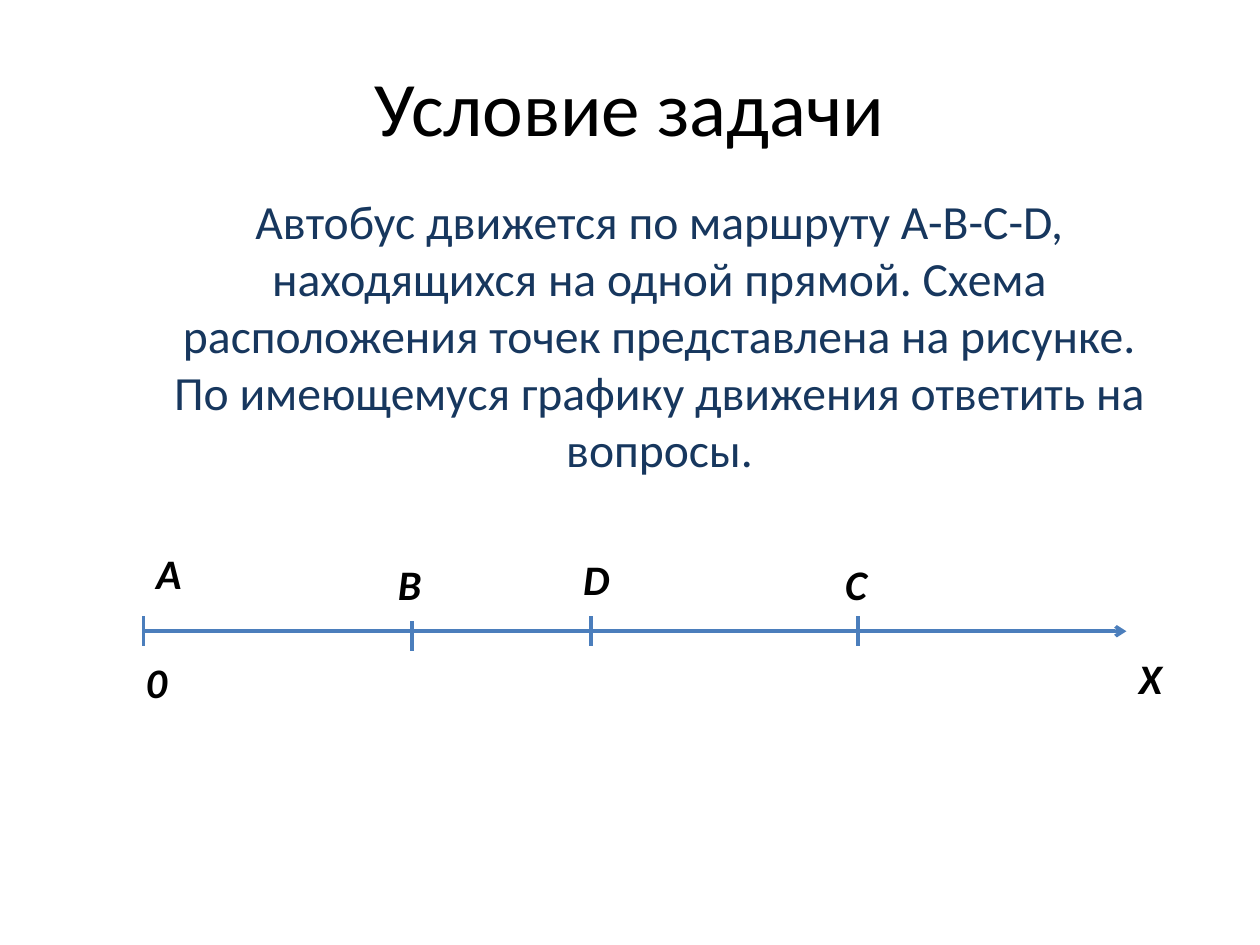
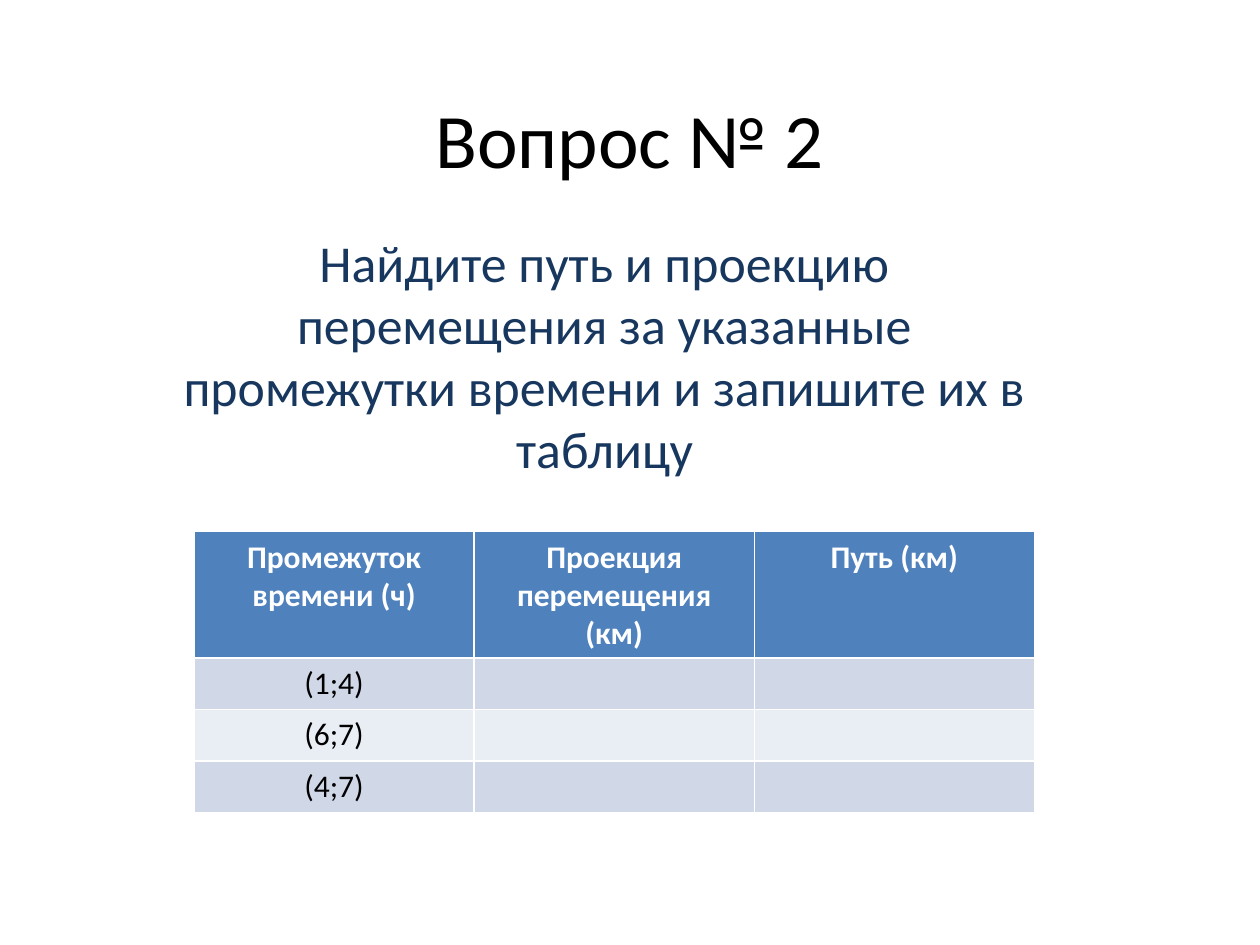
from lxml.etree import SubElement
from pptx import Presentation
from pptx.dml.color import RGBColor
from pptx.enum.shapes import MSO_CONNECTOR
from pptx.enum.text import MSO_ANCHOR, PP_ALIGN
from pptx.oxml.ns import qn
from pptx.util import Inches, Pt

BLACK, WHITE, NAVY, AXIS_BLUE = "000000", "FFFFFF", "17375E", "4B7EBC"
HEADER_BLUE, BAND_DARK, BAND_LIGHT = "4F81BD", "D0D8E8", "E9EDF4"
TITLE_LEFT, TITLE_WIDTH, TITLE_HEIGHT = 0.75, 8.5, 1.61


def style(paragraph, size, color, bold=False, italic=False, align=PP_ALIGN.CENTER):
    paragraph.alignment = align
    font = paragraph.font
    font.name, font.size = "Calibri", Pt(size)
    font.bold, font.italic = bold, italic
    font.color.rgb = RGBColor.from_string(color)


def add_line(slide, x1, y1, x2, y2):
    line = slide.shapes.add_connector(
        MSO_CONNECTOR.STRAIGHT, Inches(x1), Inches(y1), Inches(x2), Inches(y2))
    line.line.color.rgb = RGBColor.from_string(AXIS_BLUE)
    line.line.width = Pt(2)
    SubElement(line._element.spPr, qn("a:effectLst"))
    return line


presentation = Presentation()
presentation.slide_width, presentation.slide_height = Inches(10), Inches(7.5)

pages = [
    ("Условие задачи", 0.03,
     "Автобус движется по маршруту A-B-C-D, находящихся на одной прямой. "
     "Схема расположения точек представлена на рисунке.\v"
     "По имеющемуся графику движения ответить на вопросы.",
     (1.14, 1.47, 8.19, 2.28), 27.2),
    ("Вопрос № 2", 0.29,
     "Найдите путь и проекцию перемещения за указанные промежутки времени "
     "и запишите их в таблицу",
     (1.3, 1.78, 7, 1.92), 29.6),
]
slides = []
for title, title_top, body, body_box, body_size in pages:
    slide = presentation.slides.add_slide(presentation.slide_layouts[6])
    slides.append(slide)
    title_box = (TITLE_LEFT, title_top, TITLE_WIDTH, TITLE_HEIGHT)
    for text, box, size, color, anchor in (
            (title, title_box, 44, BLACK, MSO_ANCHOR.MIDDLE),
            (body, body_box, body_size, NAVY, MSO_ANCHOR.TOP)):
        frame = slide.shapes.add_textbox(*map(Inches, box)).text_frame
        frame.word_wrap = True
        frame.vertical_anchor = anchor
        frame.text = text
        style(frame.paragraphs[0], size, color)

route_slide, table_slide = slides

AXIS_START, AXIS_END, AXIS_Y, TICK = 1.14, 8.94, 5.01, 0.24
axis = add_line(route_slide, AXIS_START, AXIS_Y, AXIS_END, AXIS_Y)
SubElement(axis.line._get_or_add_ln(), qn("a:tailEnd"), type="arrow")
for x, tick_top in ((AXIS_START, 4.89), (3.27, 4.93), (4.69, 4.89), (6.81, 4.89)):
    add_line(route_slide, x, tick_top, x, tick_top + TICK)

point_labels = [("А", 1.14, 4.3), ("B", 3.06, 4.38), ("D", 4.53, 4.34),
                ("C", 6.61, 4.38), ("X", 8.94, 5.13), ("0", 1.06, 5.16)]
for text, left, top in point_labels:
    label = route_slide.shapes.add_textbox(
        Inches(left), Inches(top), Inches(0.4), Inches(0.5))
    label.text_frame.word_wrap = False
    label.text_frame.text = text
    style(label.text_frame.paragraphs[0], 24, BLACK, True, True, PP_ALIGN.LEFT)

rows = [("Промежуток времени (ч)", "Проекция перемещения (км)", "Путь (км)"),
        ("(1;4)", "", ""), ("(6;7)", "", ""), ("(4;7)", "", "")]
HEADER_HEIGHT, ROW_HEIGHT = 1, 0.41
table = table_slide.shapes.add_table(
    len(rows), len(rows[0]), Inches(1.54), Inches(4.22), Inches(6.67),
    Inches(HEADER_HEIGHT + 3 * ROW_HEIGHT)).table
for row_index, texts in enumerate(rows):
    header = row_index == 0
    table.rows[row_index].height = Inches(HEADER_HEIGHT if header else ROW_HEIGHT)
    fill = HEADER_BLUE if header else (BAND_LIGHT, BAND_DARK)[row_index % 2]
    for column_index, text in enumerate(texts):
        cell = table.cell(row_index, column_index)
        cell.fill.solid()
        cell.fill.fore_color.rgb = RGBColor.from_string(fill)
        cell.text = text
        style(cell.text_frame.paragraphs[0], 18, WHITE if header else BLACK, header)

presentation.save("out.pptx")
